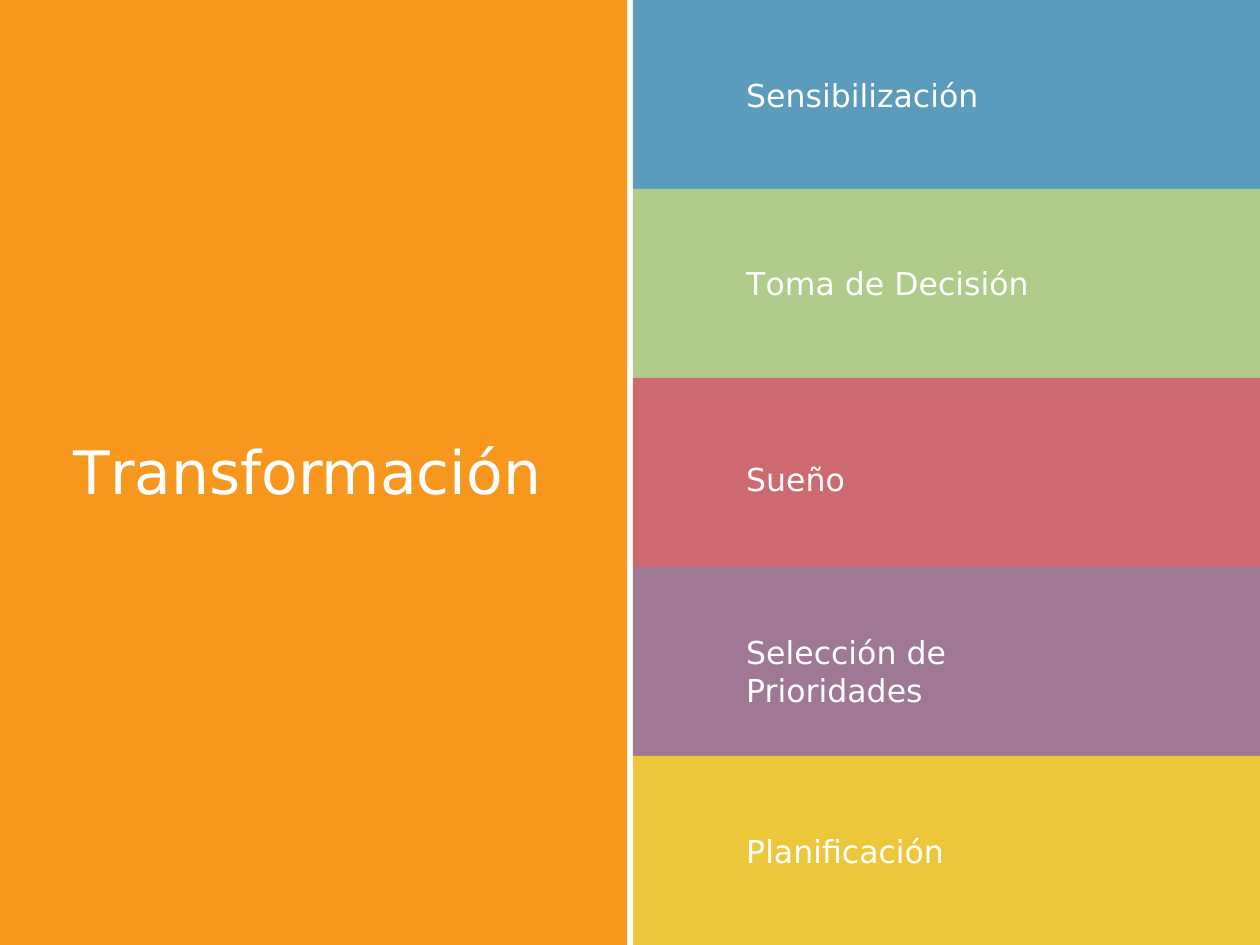
from pptx import Presentation, util as u
from pptx.dml.color import RGBColor
from pptx.enum import shapes, text

W, H = 11.11, 8.33
HEX = {"orange": "F8971D", "blue": "5B9BBB", "green": "AFCC8A",
       "red": "CC6A70", "purple": "9F7896", "yellow": "ECC73B",
       "white": "FFFFFF"}
FONT = {"name": "DejaVu Sans", "bold": False}

# Stage: colour, text runs with spacing in points, text offset in its band
STAGES = [
    ("blue", [("Sensibilización", 0)], 0.67),
    ("green", [("T", -2.1), ("oma de Decisión", 0)], 0.66),
    ("red", [("Sueño", 0)], 0.72),
    ("purple", [("Selección de Prioridades", 0)], 0.58),
    ("yellow", [("Planificación", 0)], 0.67),
]
TITLE = [("T", -3.8), ("r", -0.7), ("ansformación", 0)]


def block(slide, box, color):
    rect = slide.shapes.add_shape(shapes.MSO_SHAPE.RECTANGLE,
                                  *map(u.Inches, box))
    rect.shadow.inherit = False
    rect.fill.solid()
    rect.fill.fore_color.rgb = RGBColor.from_string(HEX[color])
    rect.line.fill.background()


def label(slide, box, runs, size, pitch=None):
    frame = slide.shapes.add_textbox(*map(u.Inches, box)).text_frame
    style = {"margin_left": 0, "margin_top": 0, "margin_right": 0,
             "margin_bottom": 0, "word_wrap": True,
             "vertical_anchor": text.MSO_ANCHOR.TOP}
    for key, val in style.items():
        setattr(frame, key, val)
    para = frame.paragraphs[0]
    if pitch:
        para.line_spacing = u.Pt(pitch)
    for words, gap in runs:
        run = para.add_run()
        run.text = words
        for key, val in {**FONT, "size": u.Pt(size)}.items():
            setattr(run.font, key, val)
        run.font.color.rgb = RGBColor.from_string(HEX["white"])
        # Letter spacing in hundredths of a point
        if gap:
            run._r.get_or_add_rPr().set("spc", str(round(gap * 100)))


def title_side(slide, x, y, w, h):
    block(slide, (x, y, w, h), "orange")
    label(slide, (x + 0.65, y + h * 0.46, w - 1.2, 0.64), TITLE, 38, 45.5)


def stage_side(slide, x, y, w, h):
    row = h / len(STAGES)
    for i, (color, runs, drop) in enumerate(STAGES):
        top = y + i * row
        block(slide, (x, top, w, row), color)
        label(slide, (x + 1, top + drop, 3.19, 0.34), runs, 20)


def main():
    deck = Presentation()
    deck.slide_width, deck.slide_height = u.Inches(W), u.Inches(H)
    slide = deck.slides.add_slide(deck.slide_layouts[6])
    # Two halves with a narrow white gap
    gap = 0.05
    half = (W - gap) / 2
    title_side(slide, 0, 0, half, H)
    stage_side(slide, half + gap, 0, half, H)
    deck.save("out.pptx")


if __name__ == "__main__":
    main()
